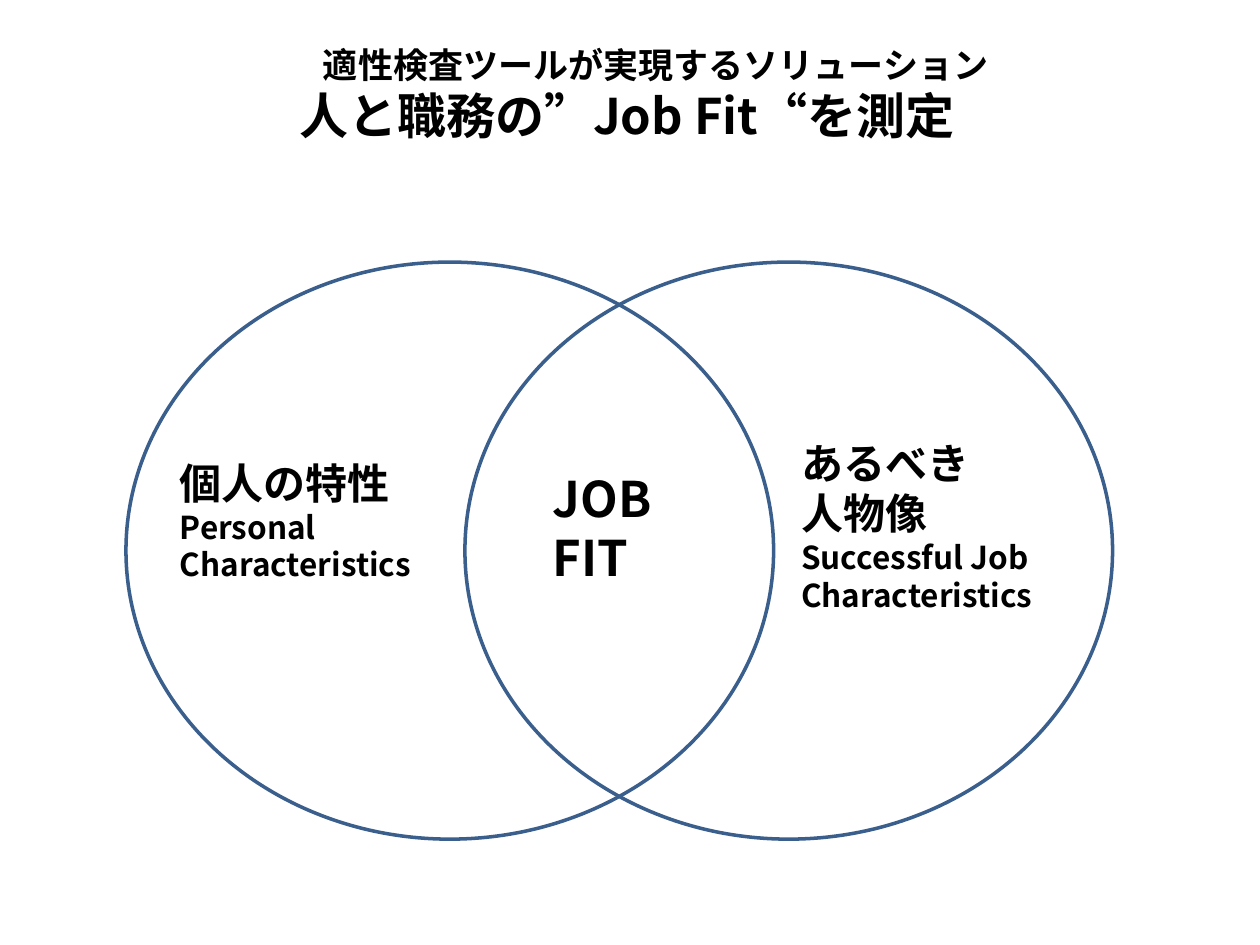
import pptx
import pptx.dml.color
import pptx.enum.shapes
import pptx.enum.text
import pptx.oxml
import pptx.oxml.ns
import pptx.util

Inches = pptx.util.Inches
Pt = pptx.util.Pt

FONT = "Noto Sans CJK JP"
COLORS = {"outline": "3A5F8C", "text": "000000"}


def color(name):
    return pptx.dml.color.RGBColor.from_string(COLORS[name])


def add_circle(slide, left):
    shape = slide.shapes.add_shape(
        pptx.enum.shapes.MSO_SHAPE.OVAL,
        Inches(left), Inches(2.08), Inches(5.14), Inches(4.58))
    shape.shadow.inherit = False
    shape.fill.background()
    shape.line.color.rgb = color("outline")
    shape.line.width = Pt(2)


def format_run(run, size):
    run.font.size = Pt(size)
    run.font.name = FONT
    run.font.bold = True
    run.font.color.rgb = color("text")
    east_asian = pptx.oxml.parse_xml(
        f'<a:ea {pptx.oxml.ns.nsdecls("a")} typeface="{FONT}"/>')
    run.font._element.find(pptx.oxml.ns.qn("a:latin")).addnext(east_asian)


def add_text(slide, left, top, width, height, paragraphs):
    shape = slide.shapes.add_textbox(
        Inches(left), Inches(top), Inches(width), Inches(height))
    text_frame = shape.text_frame
    text_frame.word_wrap = True
    text_frame.text = "\n".join(text for text, sizes in paragraphs)
    for paragraph, (text, sizes) in zip(text_frame.paragraphs, paragraphs):
        for run, size in zip(paragraph.runs, sizes):
            format_run(run, size)
    return text_frame


def add_title(slide):
    text_frame = add_text(slide, 0.14, 0.22, 9.67, 1.25, [
        ("適性検査ツールが実現するソリューション", [20]),
        ("人と職務の”Job Fit“を測定", [28]),
    ])
    text_frame.vertical_anchor = pptx.enum.text.MSO_ANCHOR.MIDDLE
    text_frame.margin_top = Inches(0.1)
    text_frame.margin_bottom = Inches(0.3)
    for paragraph in text_frame.paragraphs:
        paragraph.alignment = pptx.enum.text.PP_ALIGN.CENTER
    properties = text_frame.paragraphs[0]._p.get_or_add_pPr()
    properties.set("marL", str(Inches(0.46)))
    properties.set("indent", "0")


def main():
    presentation = pptx.Presentation()
    presentation.slide_width = Inches(10)
    presentation.slide_height = Inches(7.5)
    slide = presentation.slides.add_slide(presentation.slide_layouts[6])

    for left in (1, 3.69):
        add_circle(slide, left)
    add_text(slide, 1.33, 3.58, 2.67, 1.11,
             [("個人の特性\vPersonal Characteristics", [24, 18])])
    add_text(slide, 4.29, 3.67, 1.08, 1.04, [("JOB\vFIT", [28, 28])])
    add_text(slide, 6.26, 3.42, 2.65, 1.51, [
        ("あるべき", [24]),
        ("人物像", [24]),
        ("Successful Job Characteristics", [18]),
    ])
    add_title(slide)

    presentation.save("out.pptx")


if __name__ == "__main__":
    main()
